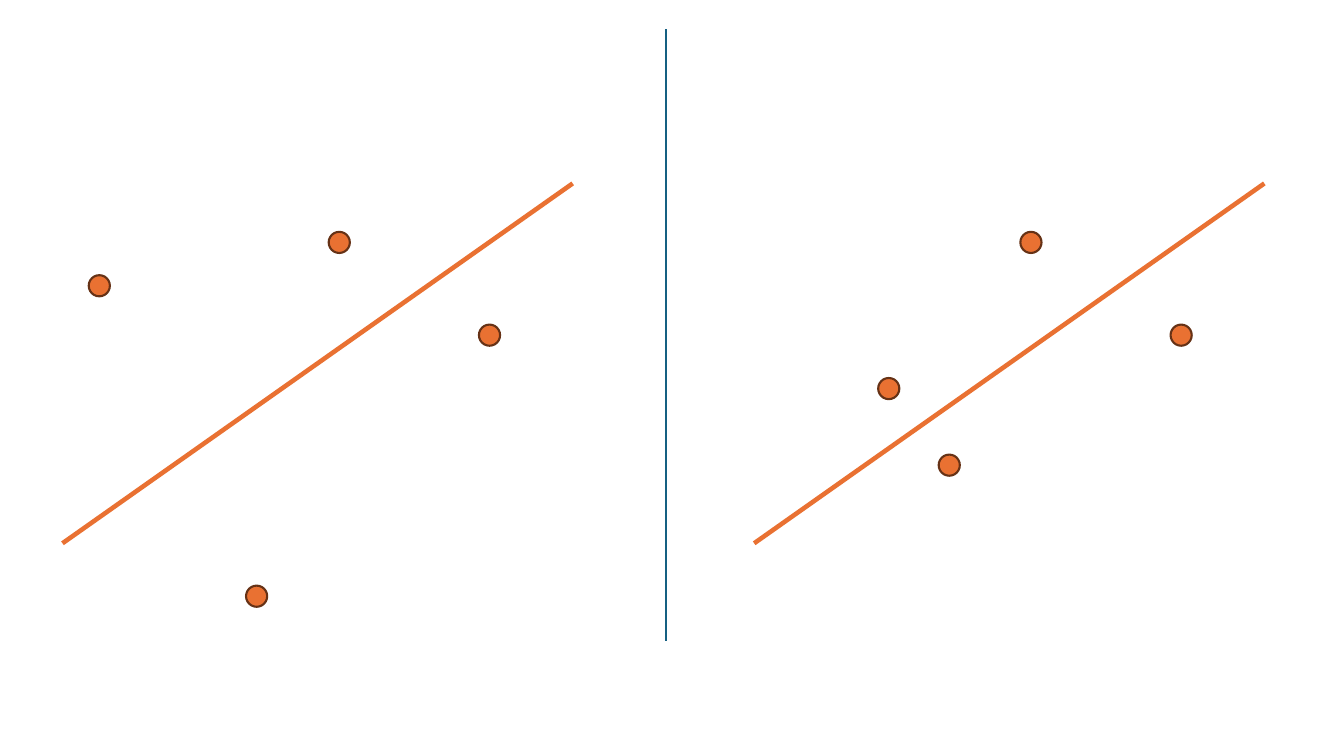
"""Two scatter panels with the same fitted line, split by a divider."""
from dataclasses import dataclass

from lxml import etree
from pptx import Presentation
from pptx import util as u
from pptx.dml.color import RGBColor
from pptx.enum import shapes
from pptx.oxml.ns import qn

SLIDE_WIDTH, SLIDE_HEIGHT = u.Inches(13.33), u.Inches(7.5)
COLUMNS, ROWS = 133.3, 75
DOT_SIZE = 2.1
ORANGE, BROWN, TEAL = "E97132", "663216", "156082"


@dataclass(frozen=True)
class Point:
    """A place on the slide grid."""
    column: float
    row: float

    def shifted(self, columns: float) -> "Point":
        """Return the point moved right by some columns."""
        return Point(self.column + columns, self.row)


@dataclass(frozen=True)
class Panel:
    """A scatter plot: its first column and the corners of its dots."""
    column: float
    dots: tuple[Point, ...]


DIVIDER = Point(66.1, 2.9), Point(66.1, 63.6)
FIT_LINE = Point(6.2, 53.9), Point(56.8, 18.2)
SHARED_DOTS = Point(32.6, 23), Point(47.5, 32.2)
PANELS = (
    Panel(0, (Point(8.8, 27.3), Point(24.4, 58.1), *SHARED_DOTS)),
    Panel(68.6, (Point(18.5, 37.5), Point(24.5, 45.1), *SHARED_DOTS)),
)


def across(columns: float) -> int:
    """Convert grid columns to a length."""
    return round(SLIDE_WIDTH * columns / COLUMNS)


def down(rows: float) -> int:
    """Convert grid rows to a length."""
    return round(SLIDE_HEIGHT * rows / ROWS)


def paint(color_format, color: str) -> None:
    """Set a colour from a hex string."""
    color_format.rgb = RGBColor.from_string(color)


def draw_line(slide, start: Point, end: Point, color: str, width: float) -> None:
    """Draw a straight line without a shadow."""
    connector = slide.shapes.add_connector(
        shapes.MSO_CONNECTOR.STRAIGHT,
        across(start.column), down(start.row), across(end.column), down(end.row))
    connector.line.width = u.Pt(width)
    paint(connector.line.color, color)
    etree.SubElement(connector._element.spPr, qn("a:effectLst"))


def draw_dot(slide, corner: Point) -> None:
    """Draw one data point."""
    shape = slide.shapes.add_shape(
        shapes.MSO_SHAPE.OVAL, across(corner.column), down(corner.row),
        across(DOT_SIZE), down(DOT_SIZE))
    shape.shadow.inherit = False
    shape.fill.solid()
    paint(shape.fill.fore_color, ORANGE)
    shape.line.width = u.Pt(1.5)
    paint(shape.line.color, BROWN)


def draw_panel(slide, panel: Panel) -> None:
    """Draw the fitted line and the dots of a panel."""
    start, end = (point.shifted(panel.column) for point in FIT_LINE)
    draw_line(slide, start, end, ORANGE, 3.25)
    for dot in panel.dots:
        draw_dot(slide, dot.shifted(panel.column))


def main() -> None:
    """Build and save the presentation."""
    presentation = Presentation()
    presentation.slide_width, presentation.slide_height = SLIDE_WIDTH, SLIDE_HEIGHT
    slide = presentation.slides.add_slide(presentation.slide_layouts[6])
    draw_line(slide, *DIVIDER, TEAL, 1.5)
    for panel in PANELS:
        draw_panel(slide, panel)
    presentation.save("out.pptx")


if __name__ == "__main__":
    main()
